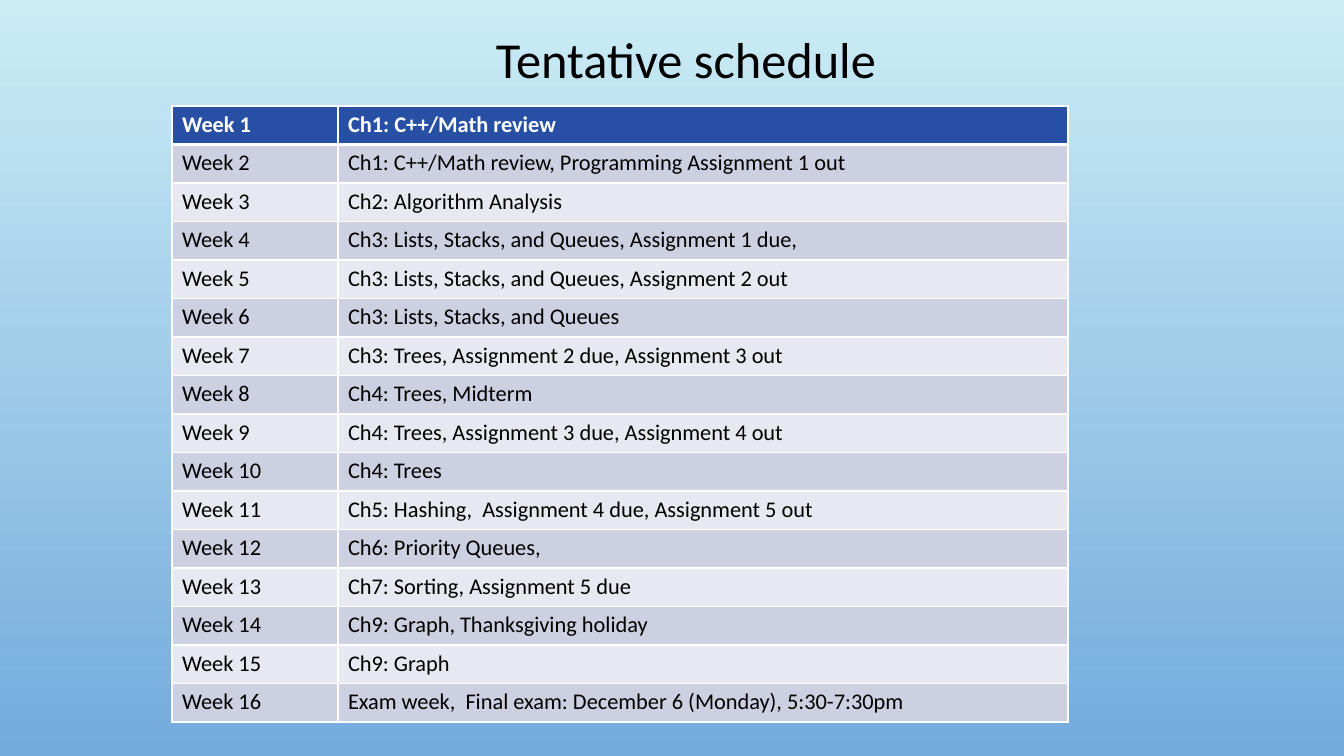
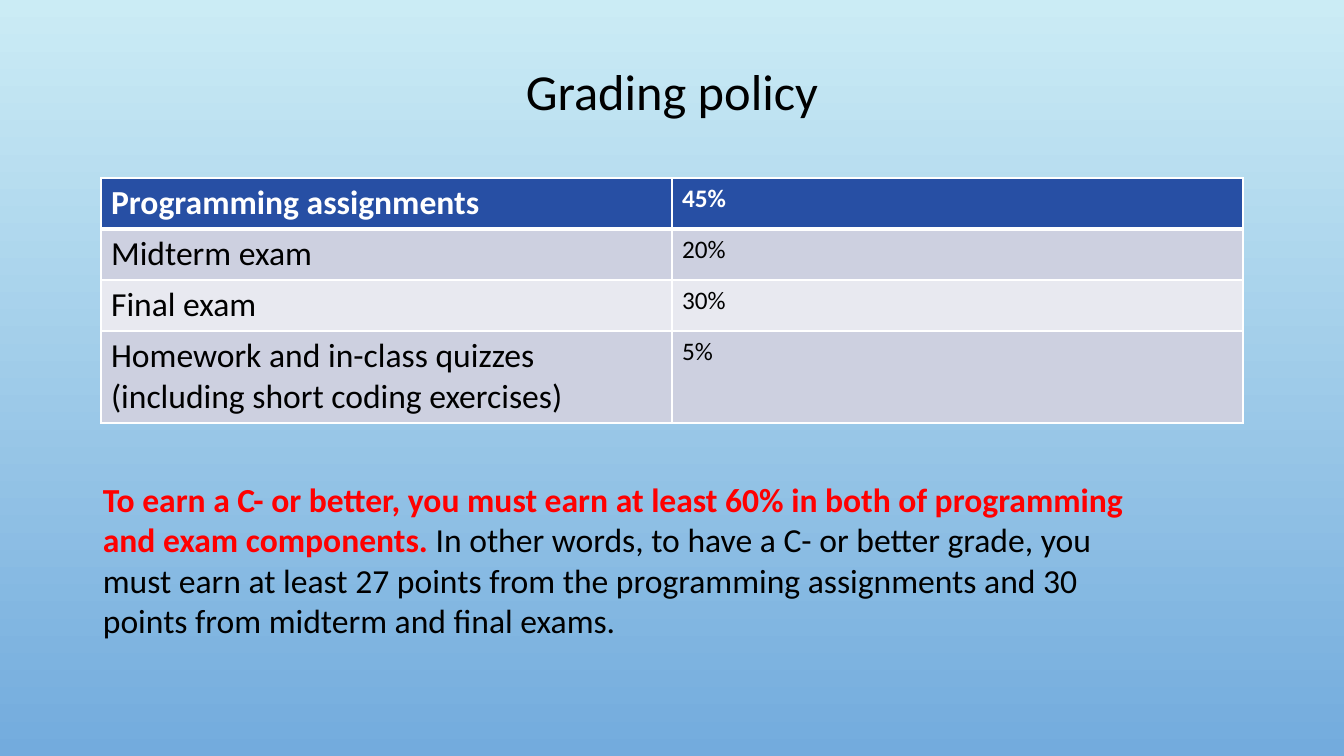
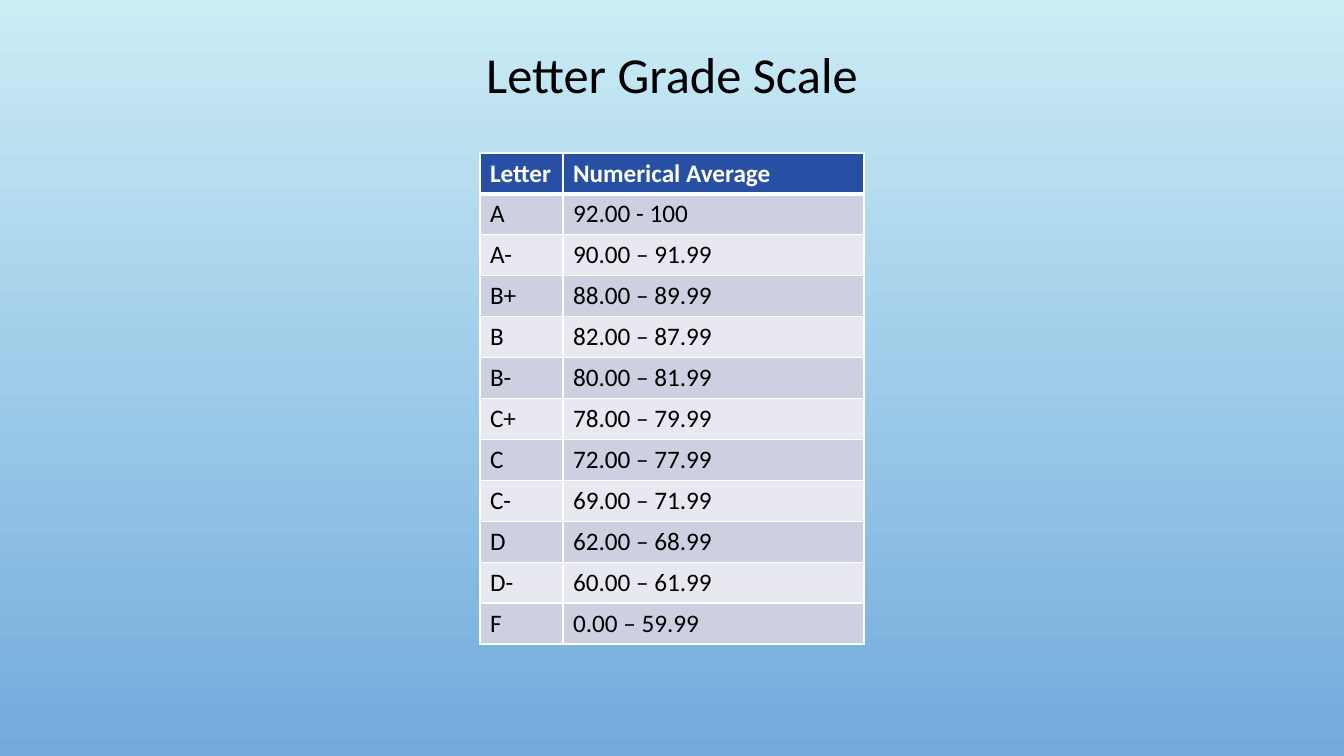
from lxml import etree
from pptx import Presentation
from pptx.dml.color import RGBColor
from pptx.enum.text import MSO_ANCHOR, MSO_AUTO_SIZE, PP_ALIGN
from pptx.oxml.ns import qn
from pptx.util import Pt

EMU_PER_INCH = 914400
PX_PER_INCH = 100.8
SLIDE_SIZE = (1344, 756)
BLANK_LAYOUT = 6

CENTER = PP_ALIGN.CENTER
MIDDLE = MSO_ANCHOR.MIDDLE
GROW_TO_TEXT = MSO_AUTO_SIZE.SHAPE_TO_FIT_TEXT

FONT = "Calibri"
BLACK = RGBColor(0x00, 0x00, 0x00)
WHITE = RGBColor(0xFF, 0xFF, 0xFF)
RED = RGBColor(0xFF, 0x00, 0x00)
SKY_TOP = RGBColor(0xCB, 0xEC, 0xF5)
SKY_BOTTOM = RGBColor(0x73, 0xAB, 0xDD)
HEADER_BLUE = RGBColor(0x27, 0x4F, 0xA4)
BAND_DARK = RGBColor(0xCD, 0xD0, 0xE0)
BAND_LIGHT = RGBColor(0xE8, 0xE9, 0xF0)

THIN, THICK = Pt(1), Pt(3)

WEEK_TOPICS = [
    "Ch1: C++/Math review",
    "Ch1: C++/Math review, Programming Assignment 1 out",
    "Ch2: Algorithm Analysis",
    "Ch3: Lists, Stacks, and Queues, Assignment 1 due,",
    "Ch3: Lists, Stacks, and Queues, Assignment 2 out",
    "Ch3: Lists, Stacks, and Queues",
    "Ch3: Trees, Assignment 2 due, Assignment 3 out",
    "Ch4: Trees, Midterm",
    "Ch4: Trees, Assignment 3 due, Assignment 4 out",
    "Ch4: Trees",
    "Ch5: Hashing,  Assignment 4 due, Assignment 5 out",
    "Ch6: Priority Queues,",
    "Ch7: Sorting, Assignment 5 due",
    "Ch9: Graph, Thanksgiving holiday",
    "Ch9: Graph",
    "Exam week,  Final exam: December 6 (Monday), 5:30-7:30pm",
]

GRADE_WEIGHTS = [
    ("Programming assignments", "45%"),
    ("Midterm exam", "20%"),
    ("Final exam", "30%"),
    ("Homework and in-class quizzes (including short coding exercises)", "5%"),
]

PASSING_RULE = ("To earn a C- or better, you must earn at least 60% in both of "
                "programming and exam components. ")
PASSING_DETAIL = ("In other words, to have a C- or better grade, you must earn at "
                  "least 27 points from the programming assignments and 30 points "
                  "from midterm and final exams.")

LETTER_SCALE = [
    ("Letter", "Numerical Average"),
    ("A", "92.00 - 100"),
    ("A-", "90.00 – 91.99"),
    ("B+", "88.00 – 89.99"),
    ("B", "82.00 – 87.99"),
    ("B-", "80.00 – 81.99"),
    ("C+", "78.00 – 79.99"),
    ("C", "72.00 – 77.99"),
    ("C-", "69.00 – 71.99"),
    ("D", "62.00 – 68.99"),
    ("D-", "60.00 – 61.99"),
    ("F", "0.00 – 59.99"),
]


def px(length):
    return round(length * EMU_PER_INCH / PX_PER_INCH)


def add_run(paragraph, text, size, color=BLACK, bold=False):
    run = paragraph.add_run()
    run.text = text
    for attribute, value in {"name": FONT, "size": Pt(size), "bold": bold}.items():
        setattr(run.font, attribute, value)
    run.font.color.rgb = color


def add_text_frame(slide, box):
    frame = slide.shapes.add_textbox(*map(px, box)).text_frame
    frame.word_wrap = True
    return frame


def add_titled_slide(prs, title, box):
    slide = prs.slides.add_slide(prs.slide_layouts[BLANK_LAYOUT])
    frame = add_text_frame(slide, box)
    frame.vertical_anchor = MIDDLE
    heading = frame.paragraphs[0]
    heading.alignment = CENTER
    heading.line_spacing = 0.9
    add_run(heading, title, 36)
    return slide


def set_borders(cell, top, bottom):
    properties = cell._tc.get_or_add_tcPr()
    widths = {"a:lnL": THIN, "a:lnR": THIN, "a:lnT": top, "a:lnB": bottom}
    for tag, width in widths.items():
        line = etree.SubElement(properties, qn(tag), w=str(int(width)))
        fill = etree.SubElement(line, qn("a:solidFill"))
        etree.SubElement(fill, qn("a:srgbClr"), val=str(WHITE))


def add_banded_table(slide, corner, widths, height, rows, sizes, shares=None):
    """Split height by shares; sizes holds one text size for each column."""
    shares = shares or [1] * len(rows)
    table = slide.shapes.add_table(
        len(rows), len(widths), *map(px, (*corner, sum(widths), height))).table
    table.horz_banding = False
    for column, width in zip(table.columns, widths):
        column.width = px(width)
    for r, (row, share) in enumerate(zip(rows, shares)):
        table.rows[r].height = px(height * share / sum(shares))
        is_header = r == 0
        band = HEADER_BLUE if is_header else (BAND_LIGHT, BAND_DARK)[r % 2]
        for c, (text, size) in enumerate(zip(row, sizes)):
            cell = table.cell(r, c)
            set_borders(cell, THICK if r == 1 else THIN, THICK if is_header else THIN)
            cell.fill.solid()
            cell.fill.fore_color.rgb = band
            add_run(cell.text_frame.paragraphs[0], text, size,
                    WHITE if is_header else BLACK, is_header)


def paint_background(master):
    fill = master.background.fill
    fill.gradient()
    fill.gradient_angle = 270
    for stop, color in zip(fill.gradient_stops, (SKY_TOP, SKY_BOTTOM)):
        stop.color.rgb = color


def build_schedule(prs):
    slide = add_titled_slide(prs, "Tentative schedule", (115, 0, 1142, 124))
    weeks = [(f"Week {n}", topic) for n, topic in enumerate(WEEK_TOPICS, 1)]
    add_banded_table(slide, (172, 106), (166, 730), 616, weeks, (16, 16))


def build_grading(prs):
    slide = add_titled_slide(prs, "Grading policy", (101, 32, 1142, 124))
    # The last row holds two lines
    add_banded_table(slide, (101, 178), (571, 571), 245, GRADE_WEIGHTS, (24, 18),
                     shares=(51, 51, 51, 92))
    frame = add_text_frame(slide, (93, 474, 1047, 173))
    frame.auto_size = GROW_TO_TEXT
    policy = frame.paragraphs[0]
    add_run(policy, PASSING_RULE, 24, RED, True)
    add_run(policy, PASSING_DETAIL, 24)


def build_letter_scale(prs):
    slide = add_titled_slide(prs, "Letter Grade Scale", (101, 32, 1142, 91))
    add_banded_table(slide, (480, 153), (83, 301), 491, LETTER_SCALE, (18, 18))


def main():
    prs = Presentation()
    prs.slide_width, prs.slide_height = map(px, SLIDE_SIZE)
    paint_background(prs.slide_master)
    build_schedule(prs)
    build_grading(prs)
    build_letter_scale(prs)
    prs.save("out.pptx")


if __name__ == "__main__":
    main()
